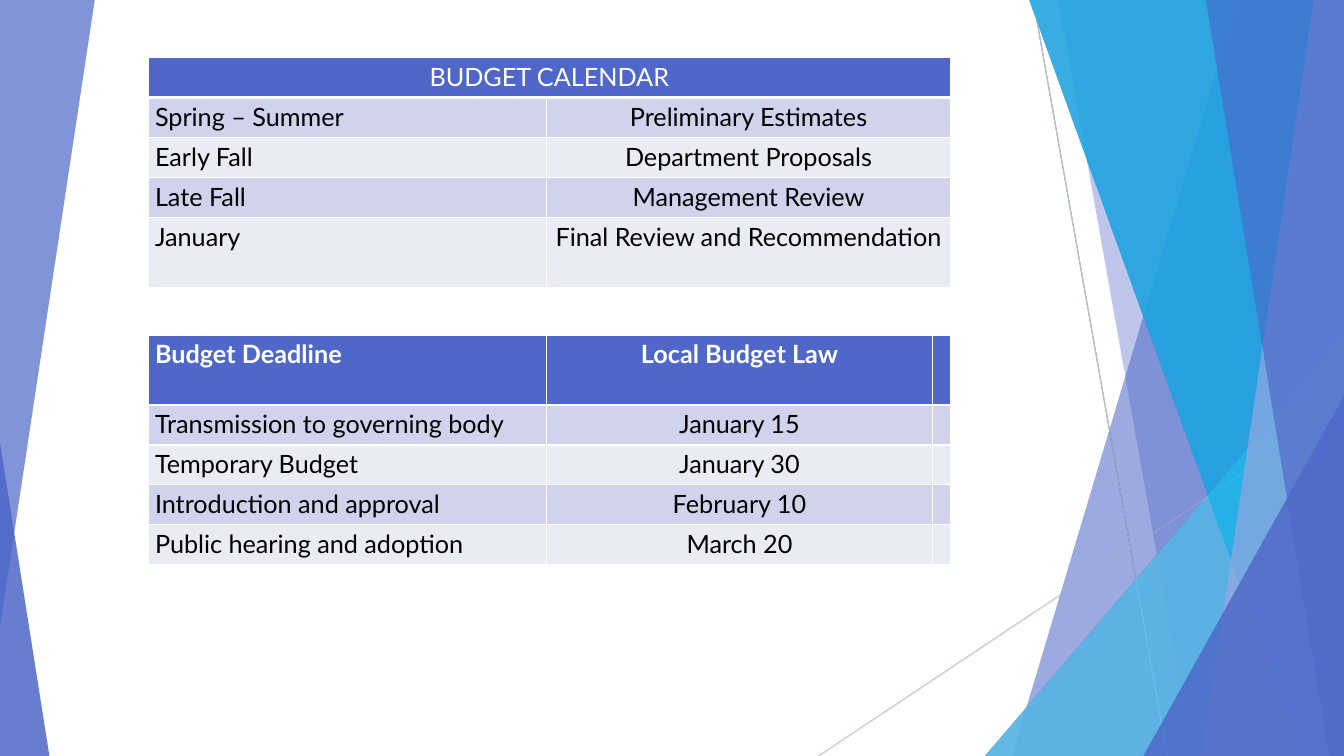
"""Build the budget calendar slide."""
import dataclasses
import typing

import pptx
import pptx.dml.color
import pptx.enum.shapes
import pptx.enum.text
import pptx.oxml
import pptx.oxml.ns
import pptx.util

WIDTH = pptx.util.Inches(13.33)
HEIGHT = pptx.util.Inches(7.5)


@dataclasses.dataclass(frozen=True)
class Theme:
    font: str = "Lato"
    size: int = 18
    border: float = 1
    header_border: float = 3
    ray_width: float = 0.75
    indigo: str = "4E67C8"
    navy: str = "31489F"
    sky: str = "5ECCF3"
    azure: str = "12B2EB"
    lavender: str = "95A4DE"
    grey: str = "BFBFBF"
    pale_grey: str = "D9D9D9"
    white: str = "FFFFFF"
    black: str = "000000"
    dark_band: str = "D0D3EB"
    light_band: str = "E9EBF5"


THEME = Theme()


class Paint(typing.NamedTuple):
    color: str
    alpha: int = 100


class Ray(typing.NamedTuple):
    x1: float
    y1: float
    x2: float
    y2: float


class Band(typing.NamedTuple):
    """A sheet reaching the right edge, given by its left side."""
    top: float
    bottom: float


class Wedge(typing.NamedTuple):
    """A triangle standing on the bottom edge."""
    left: float
    top: float
    width: float
    apex: float


class Row(typing.NamedTuple):
    texts: tuple[str, ...]
    height: float
    fill: str | None
    color: str = THEME.black
    bold: bool = False


Facet = Ray | Band | Wedge

FACETS: list[Facet] = [
    Ray(76.88, 0, 86.85, 100),
    Ray(100, 53.73, 60.9, 100),
    Band(92.1, 75.3),
    Band(78.75, 88.75),
    Wedge(73.28, 44.4, 26.72, 1),
    Band(76.58, 96.85),
    Band(97.75, 89.43),
    Band(89.73, 98.88),
    Wedge(85.07, 52.4, 14.93, 1),
]
BACK_PAINTS = [
    Paint(THEME.indigo, 70), Paint(THEME.indigo, 70), Paint(THEME.indigo, 36),
    Paint(THEME.indigo, 20), Paint(THEME.navy, 66), Paint(THEME.navy, 50),
    Paint(THEME.sky, 70), Paint(THEME.azure, 80), Paint(THEME.navy, 66),
]
FRONT_PAINTS = [
    Paint(THEME.grey), Paint(THEME.pale_grey), Paint(THEME.indigo, 30),
    Paint(THEME.indigo, 20), Paint(THEME.sky, 72), Paint(THEME.azure, 70),
    Paint(THEME.lavender, 70), Paint(THEME.indigo, 65), Paint(THEME.indigo, 80),
]
LEFT_SHEET = [(0, 0), (7.05, 0), (0, 82.93)]
LEFT_WEDGE = Wedge(0, 58.53, 3.68, 0)

TABLE_LEFT, TABLE_TOP = 11.01, 7.6
COLUMNS = [29.65, 28.73, 1.35]
LINE, TALL, GAP = 5.29, 9.26, 6.3
ROWS = [
    Row(("BUDGET CALENDAR",), LINE, THEME.indigo, THEME.white),
    Row(("Spring – Summer", "Preliminary Estimates"), LINE, THEME.dark_band),
    Row(("Early Fall", "Department Proposals"), LINE, THEME.light_band),
    Row(("Late Fall", "Management Review"), LINE, THEME.dark_band),
    Row(("January", "Final Review and Recommendation"), TALL, THEME.light_band),
    Row(("",), GAP, None),
    Row(("Budget Deadline", "Local Budget Law", ""), TALL, THEME.indigo, THEME.white, True),
    Row(("Transmission to governing body", "January 15", ""), LINE, THEME.dark_band),
    Row(("Temporary Budget", "January 30", ""), LINE, THEME.light_band),
    Row(("Introduction and approval", "February 10", ""), LINE, THEME.dark_band),
    Row(("Public hearing and adoption", "March 20", ""), LINE, THEME.light_band),
]


def across(share: float) -> int:
    return round(WIDTH * share / 100)


def down(share: float) -> int:
    return round(HEIGHT * share / 100)


def rgb(color: str) -> pptx.dml.color.RGBColor:
    return pptx.dml.color.RGBColor.from_string(color)


def set_alpha(sp, alpha: int) -> None:
    if alpha < 100:
        clr = next(sp.element.spPr.iter(pptx.oxml.ns.qn("a:srgbClr")))
        clr.append(pptx.oxml.parse_xml(
            f'<a:alpha {pptx.oxml.ns.nsdecls("a")} val="{alpha * 1000}"/>'))


def paint_shape(sp, paint: Paint) -> None:
    sp.shadow.inherit = False
    sp.fill.solid()
    sp.fill.fore_color.rgb = rgb(paint.color)
    sp.line.fill.background()
    set_alpha(sp, paint.alpha)


def draw_sheet(s, points: list[tuple[float, float]], paint: Paint) -> None:
    corners = [(across(x), down(y)) for x, y in points]
    builder = s.shapes.build_freeform(*corners[0])
    builder.add_line_segments(corners[1:], close=True)
    paint_shape(builder.convert_to_shape(), paint)


def draw_wedge(s, wedge: Wedge, paint: Paint) -> None:
    sp = s.shapes.add_shape(
        pptx.enum.shapes.MSO_SHAPE.ISOSCELES_TRIANGLE, across(wedge.left),
        down(wedge.top), across(wedge.width), down(100 - wedge.top))
    sp.adjustments[0] = wedge.apex
    paint_shape(sp, paint)


def draw_ray(s, ray: Ray, paint: Paint) -> None:
    cxn = s.shapes.add_connector(
        pptx.enum.shapes.MSO_CONNECTOR.STRAIGHT, across(ray.x1), down(ray.y1),
        across(ray.x2), down(ray.y2))
    cxn.line.width = pptx.util.Pt(THEME.ray_width)
    cxn.line.color.rgb = rgb(paint.color)
    set_alpha(cxn, paint.alpha)
    cxn.element.spPr.append(pptx.oxml.parse_xml(
        f'<a:effectLst {pptx.oxml.ns.nsdecls("a")}/>'))


def draw_facets(s, paints: list[Paint]) -> None:
    for facet, paint in zip(FACETS, paints):
        if isinstance(facet, Ray):
            draw_ray(s, facet, paint)
        elif isinstance(facet, Wedge):
            draw_wedge(s, facet, paint)
        else:
            draw_sheet(s, [(facet.top, 0), (100, 0), (100, 100), (facet.bottom, 100)], paint)


def set_borders(cell, bottom: float) -> None:
    tcPr = cell._tc.get_or_add_tcPr()
    widths = {"L": THEME.border, "R": THEME.border, "T": THEME.border, "B": bottom}
    for i, (side, width) in enumerate(widths.items()):
        tcPr.insert(i, pptx.oxml.parse_xml(
            f'<a:ln{side} {pptx.oxml.ns.nsdecls("a")} w="{pptx.util.Pt(width)}">'
            f'<a:solidFill><a:srgbClr val="{THEME.white}"/></a:solidFill></a:ln{side}>'))


def fill_cell(cell, row: Row, text: str, centred: bool) -> None:
    cell.margin_left = cell.margin_right = pptx.util.Inches(0.07)
    cell.margin_top = cell.margin_bottom = pptx.util.Inches(0.04)
    if row.fill:
        cell.fill.solid()
        cell.fill.fore_color.rgb = rgb(row.fill)
    else:
        cell.fill.background()
    p = cell.text_frame.paragraphs[0]
    if text:
        p.text = text
    p.font.name, p.font.size = THEME.font, pptx.util.Pt(THEME.size)
    p.font.bold, p.font.color.rgb = row.bold, rgb(row.color)
    if centred:
        p.alignment = pptx.enum.text.PP_ALIGN.CENTER


def draw_table(s) -> None:
    tbl = s.shapes.add_table(
        len(ROWS), len(COLUMNS), across(TABLE_LEFT), down(TABLE_TOP),
        across(sum(COLUMNS)), down(sum(row.height for row in ROWS))).table
    tbl.first_row = tbl.horz_banding = False
    for column, width in zip(tbl.columns, COLUMNS):
        column.width = across(width)
    last = len(COLUMNS) - 1
    for i, row in enumerate(ROWS):
        tbl.rows[i].height = down(row.height)
        end = len(row.texts) - 1
        if end < last:
            tbl.cell(i, end).merge(tbl.cell(i, last))
        for j in range(len(COLUMNS)):
            text = row.texts[j] if j <= end else ""
            fill_cell(tbl.cell(i, j), row, text, j > 0 or end == 0)
            set_borders(tbl.cell(i, j), THEME.border if i else THEME.header_border)


def main() -> None:
    prs = pptx.Presentation()
    prs.slide_width, prs.slide_height = WIDTH, HEIGHT
    s = prs.slides.add_slide(prs.slide_layouts[6])
    draw_sheet(s, LEFT_SHEET, Paint(THEME.indigo, 70))
    draw_facets(s, BACK_PAINTS)
    draw_facets(s, FRONT_PAINTS)
    draw_wedge(s, LEFT_WEDGE, Paint(THEME.indigo, 85))
    draw_table(s)
    prs.save("out.pptx")


if __name__ == "__main__":
    main()
